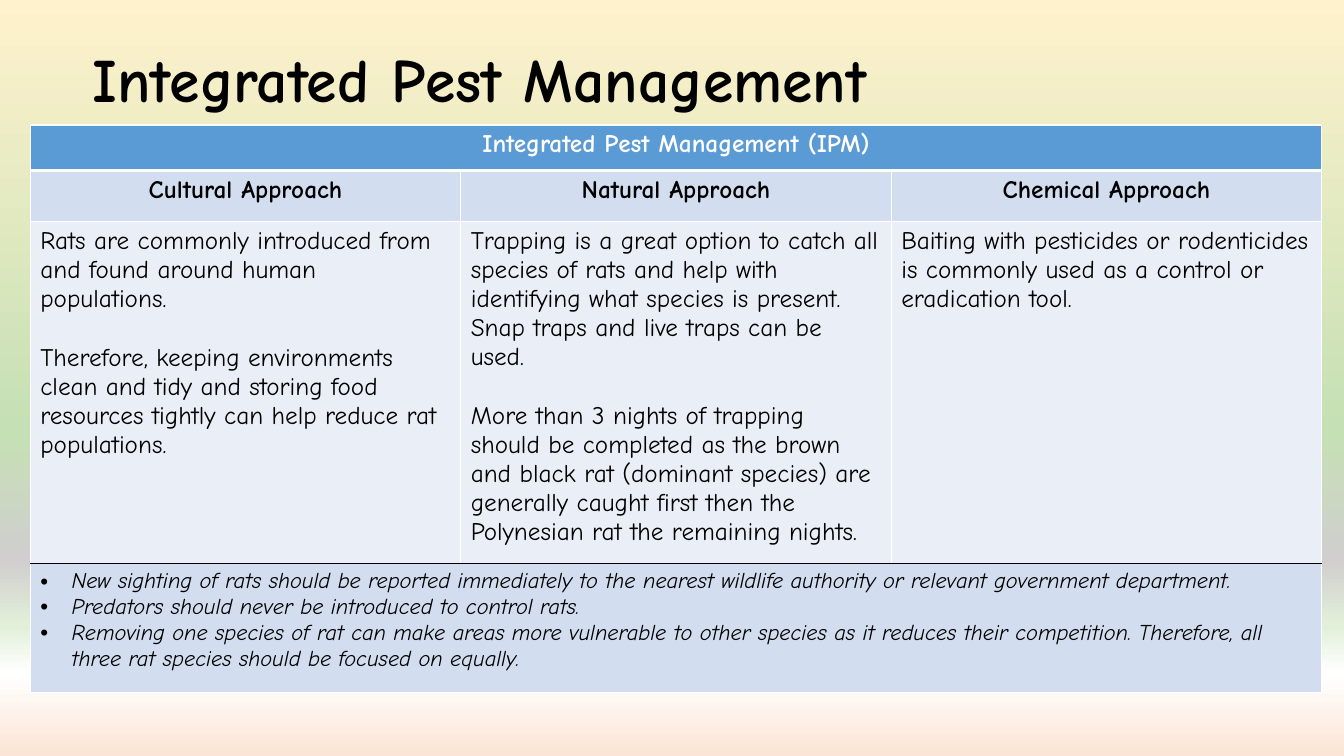
from dataclasses import dataclass

from lxml import etree
from pptx import Presentation
from pptx.dml.color import RGBColor
from pptx.enum.text import MSO_ANCHOR, PP_ALIGN
from pptx.oxml import parse_xml
from pptx.oxml.ns import nsdecls, qn
from pptx.slide import Slide
from pptx.table import Table, _Cell
from pptx.text.text import _Paragraph
from pptx.util import Inches, Pt

MIDDLE = MSO_ANCHOR.MIDDLE
LEFT, CENTER = PP_ALIGN.LEFT, PP_ALIGN.CENTER

FONT_NAME = "Comic Neue"
BLACK = RGBColor(0x00, 0x00, 0x00)
WHITE = RGBColor(0xFF, 0xFF, 0xFF)
HEADER_BLUE = RGBColor(0x5B, 0x9B, 0xD5)
BAND_BLUE = RGBColor(0xD2, 0xDE, 0xEF)
PALE_BLUE = RGBColor(0xEA, 0xEF, 0xF7)
BACKGROUND_STOPS = [
    (0, RGBColor(0xFF, 0xF2, 0xCC)),
    (57, RGBColor(0xC5, 0xE0, 0xB4)),
    (74, RGBColor(0xD0, 0xCE, 0xCE)),
    (83, RGBColor(0xE2, 0xF0, 0xD9)),
    (89, WHITE),
    (100, RGBColor(0xFB, 0xE5, 0xD6)),
]

COLUMN_COUNT = 3
COLUMN_WIDTH = 4.27
BULLET_INDENT = Inches(0.31)


@dataclass
class Row:
    height: float
    fill: RGBColor
    cells: list[list[str]]  # one list of paragraphs per cell
    size: int = 18
    color: RGBColor = BLACK
    bold: bool = False
    italic: bool = False
    align: PP_ALIGN = LEFT
    bulleted: bool = False
    gap: int = 0
    top: tuple[RGBColor, int] = (WHITE, 1)
    bottom: tuple[RGBColor, int] = (WHITE, 1)


ROWS = [
    Row(0.45, HEADER_BLUE, [["Integrated Pest Management (IPM)"]],
        color=WHITE, bold=True, align=CENTER, bottom=(WHITE, 3)),
    Row(0.51, BAND_BLUE,
        [["Cultural Approach"], ["Natural Approach"], ["Chemical Approach"]],
        bold=True, align=CENTER, top=(WHITE, 3)),
    Row(3.2, PALE_BLUE, [
        ["Rats are commonly introduced from and found around human populations.",
         "Therefore, keeping environments clean and tidy and storing food "
         "resources tightly can help reduce rat populations."],
        ["Trapping is a great option to catch all species of rats and help with "
         "identifying what species is present. Snap traps and live traps can be used.",
         "More than 3 nights of trapping should be completed as the brown and black "
         "rat (dominant species) are generally caught first then the Polynesian rat "
         "the remaining nights."],
        ["Baiting with pesticides or rodenticides is commonly used as a control or "
         "eradication tool."],
    ], gap=21, bottom=(BLACK, 1)),
    Row(1.28, BAND_BLUE, [[
        "New sighting of rats should be reported immediately to the nearest wildlife "
        "authority or relevant government department.",
        "Predators should never be introduced to control rats.",
        "Removing one species of rat can make areas more vulnerable to other species "
        "as it reduces their competition. Therefore, all three rat species should be "
        "focused on equally.",
    ]], size=16, italic=True, bulleted=True, top=(BLACK, 1)),
]


def set_background(slide: Slide) -> None:
    fill = slide.background.fill
    fill.gradient()
    fill.gradient_angle = 270  # counter-clockwise, so top to bottom
    stops = slide.background._cSld.find(".//" + qn("a:gsLst"))
    for stop in list(stops):
        stops.remove(stop)
    for position, color in BACKGROUND_STOPS:
        stops.append(parse_xml(
            f'<a:gs {nsdecls("a")} pos="{position * 1000}">'
            f'<a:srgbClr val="{color}"/></a:gs>'))


def add_run(paragraph: _Paragraph, text: str, size: int, color: RGBColor,
            bold: bool, italic: bool = False) -> None:
    run = paragraph.add_run()
    run.text = text
    run.font.name = FONT_NAME
    run.font.size = Pt(size)
    run.font.color.rgb = color
    run.font.bold = bold
    run.font.italic = italic


def add_bullet(paragraph: _Paragraph) -> None:
    properties = paragraph._p.get_or_add_pPr()
    properties.set("marL", str(BULLET_INDENT))
    properties.set("indent", str(-BULLET_INDENT))
    etree.SubElement(properties, qn("a:buFont")).set("typeface", "Arial")
    etree.SubElement(properties, qn("a:buChar")).set("char", "•")


def set_borders(cell: _Cell, row: Row) -> None:
    borders = {"lnL": (WHITE, 1), "lnR": (WHITE, 1),
               "lnT": row.top, "lnB": row.bottom}
    properties = cell._tc.get_or_add_tcPr()
    for index, (tag, (color, width)) in enumerate(borders.items()):
        properties.insert(index, parse_xml(
            f'<a:{tag} {nsdecls("a")} w="{Pt(width)}"><a:solidFill>'
            f'<a:srgbClr val="{color}"/></a:solidFill></a:{tag}>'))


def fill_row(table: Table, row_index: int, row: Row) -> None:
    table.rows[row_index].height = Inches(row.height)
    cells = [table.cell(row_index, column) for column in range(COLUMN_COUNT)]
    for cell in cells:
        cell.fill.solid()
        cell.fill.fore_color.rgb = row.fill
        set_borders(cell, row)
    if len(row.cells) == 1:
        cells[0].merge(cells[-1])
    for cell, texts in zip(cells, row.cells):
        frame = cell.text_frame
        for index, text in enumerate(texts):
            paragraph = frame.add_paragraph() if index else frame.paragraphs[0]
            paragraph.alignment = row.align
            if index and row.gap:
                paragraph.space_before = Pt(row.gap)
            if row.bulleted:
                add_bullet(paragraph)
            add_run(paragraph, text, row.size, row.color, row.bold, row.italic)


def add_title(slide: Slide, text: str) -> None:
    title = slide.shapes.add_textbox(
        Inches(0.82), Inches(0.09), Inches(11.5), Inches(1.45))
    frame = title.text_frame
    frame.word_wrap = True
    frame.vertical_anchor = MIDDLE
    paragraph = frame.paragraphs[0]
    paragraph.line_spacing = 0.9
    add_run(paragraph, text, 44, BLACK, bold=True)


def add_approach_table(slide: Slide) -> None:
    table = slide.shapes.add_table(
        len(ROWS), COLUMN_COUNT, Inches(0.3), Inches(1.24),
        Inches(COLUMN_COUNT * COLUMN_WIDTH),
        Inches(sum(row.height for row in ROWS))).table
    table.first_row = False
    table.horz_banding = False
    for column in table.columns:
        column.width = Inches(COLUMN_WIDTH)
    for row_index, row in enumerate(ROWS):
        fill_row(table, row_index, row)


def main() -> None:
    presentation = Presentation()
    presentation.slide_width = Inches(13.33)
    presentation.slide_height = Inches(7.5)
    slide = presentation.slides.add_slide(presentation.slide_layouts[6])
    set_background(slide)
    add_title(slide, "Integrated Pest Management")
    add_approach_table(slide)
    presentation.save("out.pptx")


if __name__ == "__main__":
    main()
